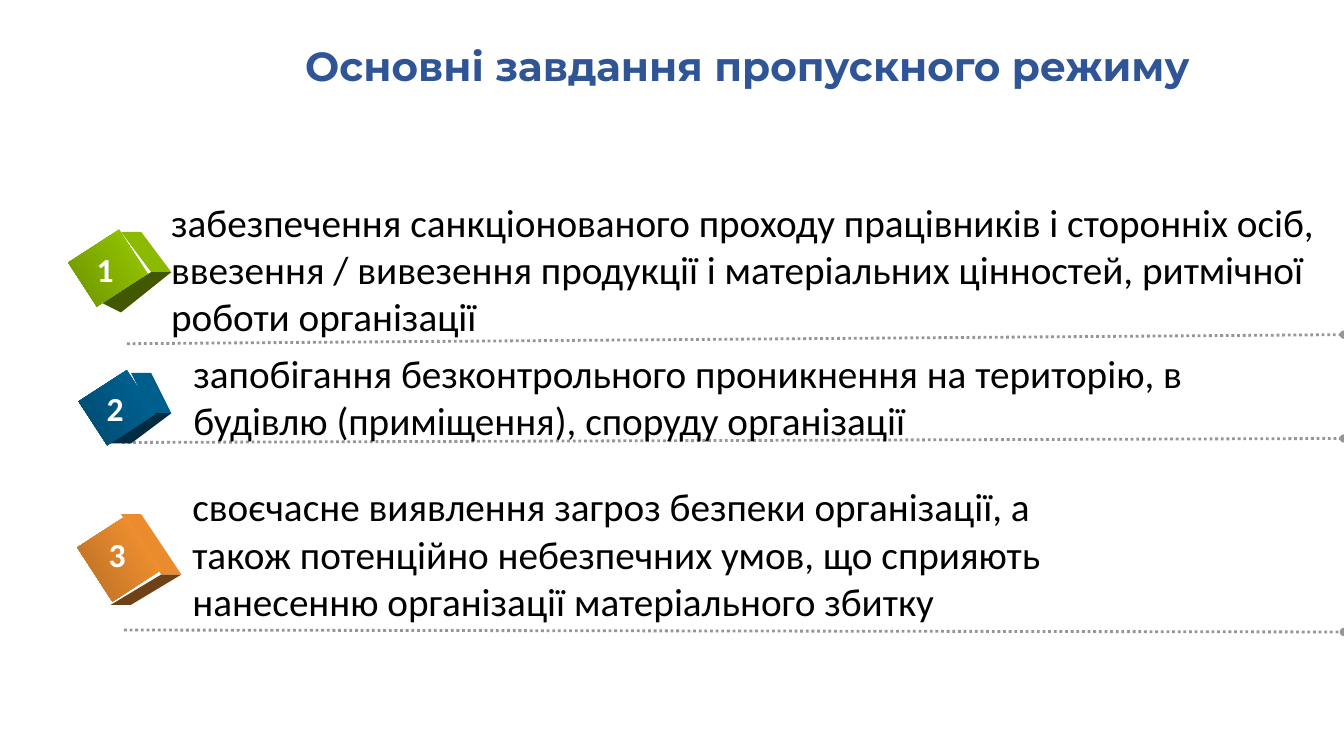
from math import cos, radians, sin

from lxml import etree
from pptx import Presentation
from pptx.dml.color import RGBColor
from pptx.enum.dml import MSO_LINE
from pptx.enum.shapes import MSO_CONNECTOR, MSO_SHAPE
from pptx.enum.text import MSO_ANCHOR, MSO_AUTO_SIZE, PP_ALIGN
from pptx.oxml.ns import qn
from pptx.util import Inches, Pt

STRAIGHT, RECT = MSO_CONNECTOR.STRAIGHT, MSO_SHAPE.RECTANGLE
DOTS, GROW = MSO_LINE.ROUND_DOT, MSO_AUTO_SIZE.SHAPE_TO_FIT_TEXT
MIDDLE, CENTER = MSO_ANCHOR.MIDDLE, PP_ALIGN.CENTER

# Grid of square cells, 133.33 columns by 75 rows
CELL = Inches(0.1)
COLS, ROWS = 133.33, 75
TILT = 57
DEPTH = (2, 0.1)

HEX = {"title": "2F5597", "text": "000000", "digit": "FFFFFF", "rule": "969696"}
TITLE = {"name": "Montserrat", "size": Pt(29), "bold": True}
BODY = {"name": "Calibri", "size": Pt(28), "bold": False}
DIGIT = {"name": "Calibri", "size": Pt(24), "bold": True}

# Cube colours: light, dark, right side, underside
TASKS = [
    {"text": "забезпечення санкціонованого проходу працівників і сторонніх осіб, "
             "ввезення / вивезення продукції і матеріальних цінностей, ритмічної "
             "роботи організації",
     "box": (16, 19.2, 117.4, 15.1), "cube": (8.1, 23.6, 5.2, 6),
     "digit": (8.6, 24.2, 4.1, 5), "rule": (12.6, 34.1, 33.2),
     "hues": ("99CC00", "6D9200", "8CBA00", "425800")},
    {"text": "запобігання безконтрольного проникнення на територію, в будівлю "
             "(приміщення), споруду організації",
     "box": (18.2, 34.2, 108.2, 10.4), "cube": (9, 37.6, 5.2, 5.7),
     "digit": (9.6, 38, 3.9, 5), "rule": (12.1, 43.9, 43.5),
     "hues": ("006699", "00496D", "005E8C", "002C42")},
    {"text": "своєчасне виявлення загроз безпеки організації, а також потенційно "
             "небезпечних умов, що сприяють нанесенню організації матеріального "
             "збитку",
     "box": (18.1, 47.4, 91.8, 18.5), "cube": (8.6, 52.6, 6.4, 5.7),
     "digit": (9.8, 52.5, 3.9, 6.1), "rule": (12.3, 62.5, 62.7),
     "hues": ("FF9933", "B66D24", "EA8C2E", "6E4216")},
]


def grid(*vals):
    return [round(v * CELL) for v in vals]


def rgb(hue):
    return RGBColor.from_string(hue)


def style(para, text, form, hue):
    run = para.add_run()
    run.text = text
    for key, val in form.items():
        setattr(run.font, key, val)
    run.font.color.rgb = rgb(hue)


def label(group, box, text, form, hue, wrap=True):
    frame = group.shapes.add_textbox(*grid(*box)).text_frame
    frame.word_wrap = wrap
    frame.auto_size = GROW
    style(frame.paragraphs[0], text, form, hue)


def rule(group, left, start, end):
    line = group.shapes.add_connector(STRAIGHT, *grid(left, start, COLS, end))
    line.line.color.rgb = rgb(HEX["rule"])
    line.line.width = Pt(2)
    line.line.dash_style = DOTS
    props = line._element.spPr
    tail = etree.SubElement(props.find(qn("a:ln")), qn("a:tailEnd"))
    tail.set("type", "oval")
    etree.SubElement(props, qn("a:effectLst"))


def side(group, start, end, hue):
    # Face swept from one edge of the front along the depth
    dx, dy = DEPTH
    pts = [start, (start[0] + dx, start[1] + dy), (end[0] + dx, end[1] + dy), end]
    path = group.shapes.build_freeform(*pts[0], scale=CELL)
    path.add_line_segments(pts[1:])
    face = path.convert_to_shape()
    face.shadow.inherit = False
    face.fill.solid()
    face.fill.fore_color.rgb = rgb(hue)
    face.line.fill.background()


def cube(group, box, hues):
    left, top, wide, high = box
    cx, cy = left + wide / 2, top + high / 2
    c, s = cos(radians(TILT)), sin(radians(TILT))

    def corner(x, y):
        x, y = x * wide / 2, y * high / 2
        return cx + x * c - y * s, cy + x * s + y * c

    peak, right, base = corner(-1, -1), corner(1, -1), corner(1, 1)
    side(group, peak, right, hues[2])
    side(group, right, base, hues[3])

    front = group.shapes.add_shape(RECT, *grid(*box))
    front.rotation = TILT
    front.shadow.inherit = False
    front.line.fill.background()
    front.fill.gradient()
    front.fill.gradient_angle = 270
    for stop, hue, spot in zip(front.fill.gradient_stops, hues, (0, 1)):
        stop.color.rgb = rgb(hue)
        stop.position = spot


def task(slide, num, item):
    group = slide.shapes.add_group_shape()
    rule(group, *item["rule"])
    cube(group, item["cube"], item["hues"])
    label(group, item["box"], item["text"], BODY, HEX["text"])
    label(group, item["digit"], str(num), DIGIT, HEX["digit"], wrap=False)


def head(slide, text):
    title = slide.shapes.title
    title.left, title.top, title.width, title.height = grid(22.1, 3.2, 104.2, 7.1)
    title.text_frame.vertical_anchor = MIDDLE
    para = title.text_frame.paragraphs[0]
    para.alignment = CENTER
    para.line_spacing = 0.9
    style(para, text, TITLE, HEX["title"])


def main():
    deck = Presentation()
    deck.slide_width, deck.slide_height = grid(COLS, ROWS)
    slide = deck.slides.add_slide(deck.slide_layouts[5])

    # Heading, then one numbered group per task
    head(slide, "Основні завдання пропускного режиму")
    for num, item in enumerate(TASKS, 1):
        task(slide, num, item)
    deck.save("out.pptx")


if __name__ == "__main__":
    main()
